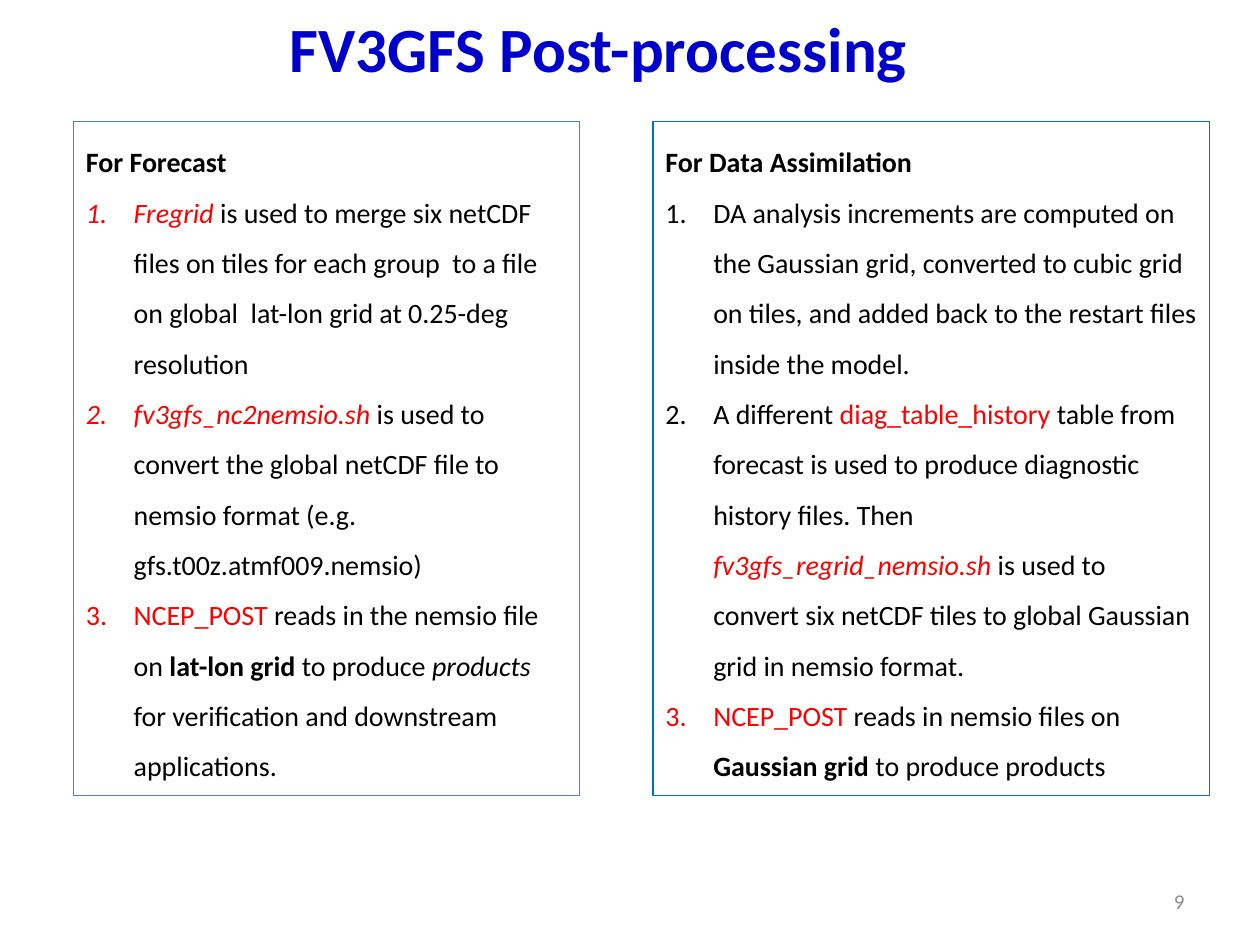
import dataclasses
import typing

import pptx
import pptx.dml.color
import pptx.enum.shapes
import pptx.enum.text
import pptx.util
from lxml import etree

COLORS = {
    "title": "0000CC",
    "body": "000000",
    "term": "FF0000",
    "number": "8C8C8C",
    "forecast": "4F81BD",
    "assimilation": "0070C0",
}
WIDTH, HEIGHT = 10, 7.5
COLUMNS, ROWS = 120, 90
HANGING = pptx.util.Inches(0.38)
ALIGN = pptx.enum.text.PP_ALIGN
ANCHOR = pptx.enum.text.MSO_ANCHOR
FIT = pptx.enum.text.MSO_AUTO_SIZE


class Area(typing.NamedTuple):
    column: float
    row: float
    columns: float
    rows: float


class Span(typing.NamedTuple):
    words: str
    color: str = "body"
    bold: bool = False
    italic: bool = False


@dataclasses.dataclass(frozen=True)
class Label:
    area: Area
    span: Span
    size: int
    align: ALIGN


@dataclasses.dataclass(frozen=True)
class Panel:
    area: Area
    border: str
    heading: str
    steps: tuple[tuple[Span, ...], ...]


LABELS = (
    Label(Area(6, 1, 102, 7), Span("FV3GFS Post-processing", "title", bold=True), 36, ALIGN.CENTER),
    Label(Area(86, 83.4, 28, 4.8), Span("9", "number"), 12, ALIGN.RIGHT),
)

POST = Span("NCEP_POST", "term")

PANELS = (
    Panel(Area(7, 11.6, 48.2, 64.2), "forecast", "For Forecast", (
        (
            Span("Fregrid ", "term", italic=True),
            Span("is used to merge six netCDF files on tiles for each group  to a file "
                 "on global  lat-lon grid at 0.25-deg resolution"),
        ),
        (
            Span("fv3gfs_nc2nemsio.sh ", "term", italic=True),
            Span("is used to convert the global netCDF file to nemsio format "
                 "(e.g.  gfs.t00z.atmf009.nemsio)"),
        ),
        (
            POST,
            Span(" reads in the nemsio file on "),
            Span("lat-lon grid", bold=True),
            Span(" to produce "),
            Span("products", italic=True),
            Span(" for verification and downstream applications."),
        ),
    )),
    Panel(Area(62.2, 11.6, 53, 64.2), "assimilation", "For Data Assimilation", (
        (
            Span("DA analysis increments are computed on the Gaussian grid, converted to "
                 "cubic grid on tiles, and added back to the restart files inside the model."),
        ),
        (
            Span("A different "),
            Span("diag_table_history ", "term"),
            Span("table from forecast is used to produce diagnostic history files. Then "),
            Span("fv3gfs_regrid_nemsio.sh", "term", italic=True),
            Span(" is used to convert six netCDF tiles to global Gaussian grid in nemsio format."),
        ),
        (
            POST,
            Span(" reads in nemsio files on "),
            Span("Gaussian grid", bold=True),
            Span(" to produce products"),
        ),
    )),
)


def rgb(name: str) -> pptx.dml.color.RGBColor:
    return pptx.dml.color.RGBColor.from_string(COLORS[name])


def place(area: Area) -> tuple[int, ...]:
    across, down = WIDTH / COLUMNS, HEIGHT / ROWS
    lengths = (area.column * across, area.row * down, area.columns * across, area.rows * down)
    return tuple(pptx.util.Inches(length) for length in lengths)


def apply(target: typing.Any, formats: dict[str, typing.Any]) -> None:
    for attribute, value in formats.items():
        setattr(target, attribute, value)


def write(paragraph: typing.Any, spans: tuple[Span, ...], size: int) -> None:
    for span in spans:
        run = paragraph.add_run()
        run.text = span.words
        apply(run.font, {
            "name": "Calibri",
            "size": pptx.util.Pt(size),
            "bold": span.bold,
            "italic": span.italic,
        })
        run.font.color.rgb = rgb(span.color)


def number(paragraph: typing.Any) -> None:
    properties = paragraph._p.get_or_add_pPr()
    properties.set("marL", str(HANGING))
    properties.set("indent", str(-HANGING))
    numbering = etree.SubElement(properties, pptx.oxml.ns.qn("a:buAutoNum"))
    numbering.set("type", "arabicPeriod")


def draw_label(slide: typing.Any, label: Label) -> None:
    frame = slide.shapes.add_textbox(*place(label.area)).text_frame
    apply(frame, {"word_wrap": True, "vertical_anchor": ANCHOR.MIDDLE})
    paragraph = frame.paragraphs[0]
    paragraph.alignment = label.align
    write(paragraph, (label.span,), label.size)


def draw_panel(slide: typing.Any, panel: Panel) -> None:
    box = slide.shapes.add_shape(pptx.enum.shapes.MSO_SHAPE.RECTANGLE, *place(panel.area))
    box.shadow.inherit = False
    box.fill.background()
    box.line.color.rgb = rgb(panel.border)
    box.line.width = pptx.util.Pt(0.75)
    frame = box.text_frame
    apply(frame, {
        "word_wrap": True,
        "vertical_anchor": ANCHOR.TOP,
        "auto_size": FIT.SHAPE_TO_FIT_TEXT,
    })
    heading = frame.paragraphs[0]
    write(heading, (Span(panel.heading, bold=True),), 16)
    for step in panel.steps:
        paragraph = frame.add_paragraph()
        write(paragraph, step, 16)
        number(paragraph)
    for paragraph in frame.paragraphs:
        apply(paragraph, {"alignment": ALIGN.LEFT, "line_spacing": 1.5})


def main() -> None:
    presentation = pptx.Presentation()
    apply(presentation, {
        "slide_width": pptx.util.Inches(WIDTH),
        "slide_height": pptx.util.Inches(HEIGHT),
    })
    slide = presentation.slides.add_slide(presentation.slide_layouts[6])
    for label in LABELS:
        draw_label(slide, label)
    for panel in PANELS:
        draw_panel(slide, panel)
    presentation.save("out.pptx")


if __name__ == "__main__":
    main()
